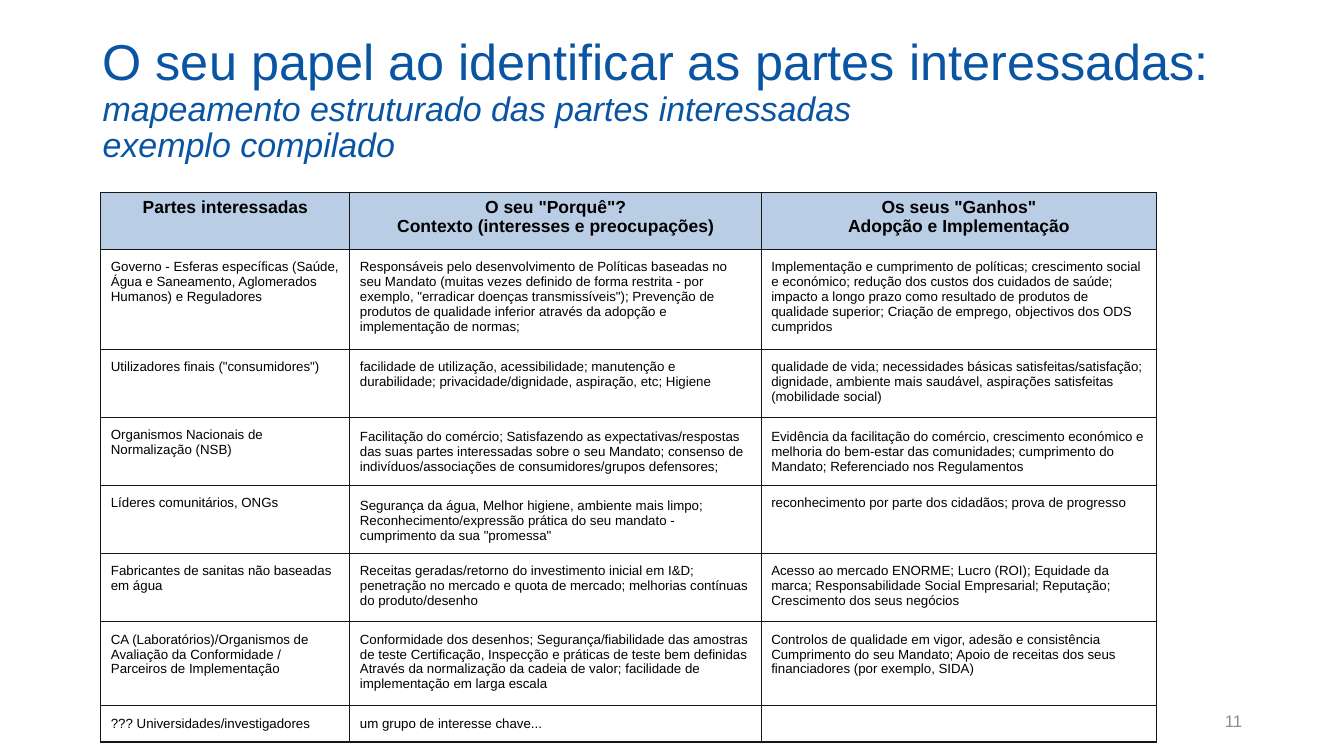
"""Build the slide on structured mapping of interested parties."""
from lxml.etree import SubElement
from pptx import Presentation
from pptx.dml.color import RGBColor
from pptx.enum.text import MSO_ANCHOR, PP_ALIGN
from pptx.oxml.ns import qn
from pptx.util import Inches, Pt

HUES = {"blue": "0A55A3", "gray": "8C8C8C", "black": "000000",
        "head": "B9CDE5", "white": "FFFFFF", "line": "181717"}


def style(font, size, hue, bold=False, slant=False):
    font.name, font.size = "Arial", Pt(size)
    font.bold, font.italic = bold, slant
    font.color.rgb = RGBColor.from_string(HUES[hue])


def add_text(left, top, width, height, words):
    box = slide.shapes.add_textbox(*map(Inches, (left, top, width, height)))
    frame = box.text_frame
    frame.word_wrap = True
    frame.vertical_anchor = MSO_ANCHOR.MIDDLE
    frame.text = words
    return frame.paragraphs[0]


deck = Presentation()
deck.slide_width, deck.slide_height = Inches(13.33), Inches(7.5)
slide = deck.slides.add_slide(deck.slide_layouts[6])

page = add_text(9.42, 6.95, 3, 0.4, "11")
page.alignment = PP_ALIGN.RIGHT
style(page.runs[0].font, 12, "gray")

title = add_text(0.92, 0.28, 11.5, 1.45, "")
title.text = ("O seu papel ao identificar as partes interessadas:\v"
              "mapeamento estruturado das partes interessadas\v"
              "exemplo compilado")
title.line_spacing = 0.9
for run, size in zip(title.runs, (36, 24.3, 24.3)):
    style(run.font, size, "blue", slant=size < 36)

rows = [
    ("Partes interessadas",
     'O seu "Porquê"?\nContexto (interesses e preocupações)',
     'Os seus "Ganhos"\nAdopção e Implementação'),
    ("Governo - Esferas específicas (Saúde, Água e Saneamento, Aglomerados Humanos) e Reguladores",
     "Responsáveis pelo desenvolvimento de Políticas baseadas no seu Mandato (muitas vezes definido "
     'de forma restrita - por exemplo, "erradicar doenças transmissíveis"); Prevenção de produtos de '
     "qualidade inferior através da adopção e implementação de normas;",
     "Implementação e cumprimento de políticas; crescimento social e económico; redução dos custos "
     "dos cuidados de saúde; impacto a longo prazo como resultado de produtos de qualidade superior; "
     "Criação de emprego, objectivos dos ODS cumpridos"),
    ('Utilizadores finais ("consumidores")',
     "facilidade de utilização, acessibilidade; manutenção e durabilidade; privacidade/dignidade, "
     "aspiração, etc; Higiene",
     "qualidade de vida; necessidades básicas satisfeitas/satisfação; dignidade, ambiente mais "
     "saudável, aspirações satisfeitas (mobilidade social)"),
    ("Organismos Nacionais de Normalização (NSB)",
     "Facilitação do comércio; Satisfazendo as expectativas/respostas das suas partes interessadas "
     "sobre o seu Mandato; consenso de indivíduos/associações de consumidores/grupos defensores;",
     "Evidência da facilitação do comércio, crescimento económico e melhoria do bem-estar das "
     "comunidades; cumprimento do Mandato; Referenciado nos Regulamentos"),
    ("Líderes comunitários, ONGs",
     "Segurança da água, Melhor higiene, ambiente mais limpo; Reconhecimento/expressão prática do "
     'seu mandato - cumprimento da sua "promessa"',
     "reconhecimento por parte dos cidadãos; prova de progresso"),
    ("Fabricantes de sanitas não baseadas em água",
     "Receitas geradas/retorno do investimento inicial em I&D; penetração no mercado e quota de "
     "mercado; melhorias contínuas do produto/desenho",
     "Acesso ao mercado ENORME; Lucro (ROI); Equidade da marca; Responsabilidade Social "
     "Empresarial; Reputação; Crescimento dos seus negócios"),
    ("CA (Laboratórios)/Organismos de Avaliação da Conformidade / Parceiros de Implementação",
     "Conformidade dos desenhos; Segurança/fiabilidade das amostras de teste Certificação, "
     "Inspecção e práticas de teste bem definidas Através da normalização da cadeia de valor; "
     "facilidade de implementação em larga escala",
     "Controlos de qualidade em vigor, adesão e consistência Cumprimento do seu Mandato; Apoio de "
     "receitas dos seus financiadores (por exemplo, SIDA)"),
    ("??? Universidades/investigadores", "um grupo de interesse chave...", ""),
]
cols = (2.47, 4.08, 3.92)
tall = [0.54] + [0.19 + 0.15 * count for count in (5, 3, 3, 3, 3, 4, 1)]
anchors = {(3, 1): MSO_ANCHOR.MIDDLE, (3, 2): MSO_ANCHOR.MIDDLE,
           (4, 1): MSO_ANCHOR.BOTTOM}

grid = slide.shapes.add_table(len(rows), len(cols), Inches(1), Inches(1.91),
                              Inches(sum(cols)), Inches(sum(tall))).table
for col, width in zip(grid.columns, cols):
    col.width = Inches(width)
for row, height in zip(grid.rows, tall):
    row.height = Inches(height)

for r, row in enumerate(rows):
    head = r == 0
    for c, words in enumerate(row):
        cell = grid.cell(r, c)
        cell.text_frame.text = words
        cell.vertical_anchor = anchors.get((r, c), MSO_ANCHOR.TOP)
        cell.margin_left = cell.margin_right = Inches(0 if head else 0.1)
        cell.margin_top = Inches(0.05 if head else 0.1)
        cell.margin_bottom = Inches(0.1 if head and c == 2 else 0 if head else 0.1)
        for para in cell.text_frame.paragraphs:
            para.alignment = PP_ALIGN.CENTER if head else PP_ALIGN.LEFT
            style(para.font, 12.5 if head else 9.5, "black", bold=head)
            for run in para.runs:
                style(run.font, 12.5 if head else 9.5, "black", bold=head)
        props = cell._tc.get_or_add_tcPr()
        for side in ("a:lnL", "a:lnR", "a:lnT", "a:lnB"):
            edge = SubElement(props, qn(side), w=str(Pt(1)))
            paint = SubElement(edge, qn("a:solidFill"))
            SubElement(paint, qn("a:srgbClr"), val=HUES["line"])
        cell.fill.solid()
        cell.fill.fore_color.rgb = RGBColor.from_string(HUES["head" if head else "white"])

deck.save("out.pptx")
